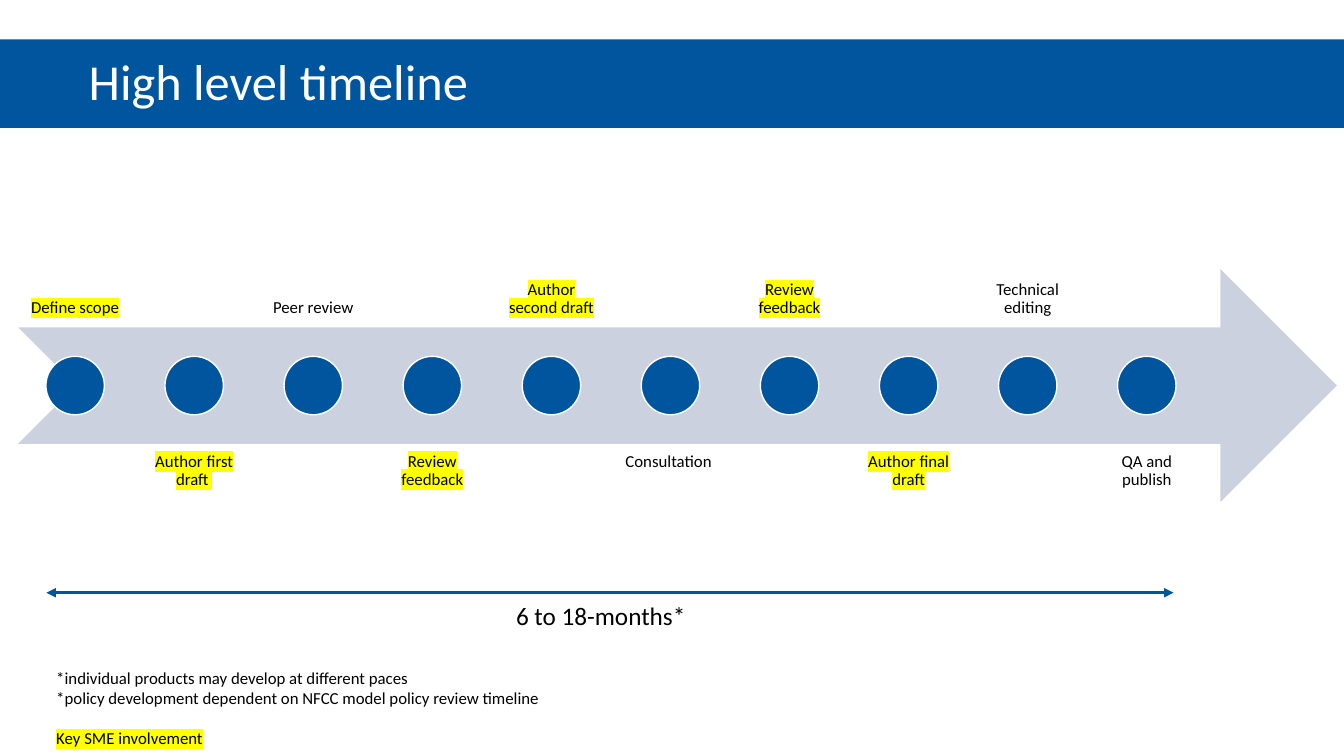
"""Build a slide with a ten-step policy timeline on a notched arrow."""
from lxml import etree
from pptx import Presentation
from pptx.dml.color import RGBColor
from pptx.enum.shapes import MSO_CONNECTOR, MSO_SHAPE
from pptx.enum.text import MSO_ANCHOR, PP_ALIGN
from pptx.oxml.ns import qn
from pptx.util import Inches, Pt

RECTANGLE, OVAL = MSO_SHAPE.RECTANGLE, MSO_SHAPE.OVAL
NOTCHED_ARROW = MSO_SHAPE.NOTCHED_RIGHT_ARROW
STRAIGHT = MSO_CONNECTOR.STRAIGHT
TOP, MIDDLE, BOTTOM = MSO_ANCHOR.TOP, MSO_ANCHOR.MIDDLE, MSO_ANCHOR.BOTTOM
LEFT, CENTER = PP_ALIGN.LEFT, PP_ALIGN.CENTER

TITLE = "High level timeline"
STEPS = [
    ("Define scope", True),
    ("Author first draft ", True),
    ("Peer review", False),
    ("Review feedback", True),
    ("Author second draft", True),
    ("Consultation ", False),
    ("Review feedback", True),
    ("Author final draft", True),
    ("Technical editing", False),
    ("QA and publish", False),
]
DURATION = [("6 to 18-months*", False)]
NOTES = [
    ("*individual products may develop at different paces", False),
    ("*policy development dependent on NFCC model policy review timeline", False),
    ("Key SME involvement", True),
]

THEME = {
    "font": "Calibri",
    "blue": RGBColor(0x00, 0x55, 0x9F),
    "pale": RGBColor(0xCC, 0xD1, 0xDF),
    "white": RGBColor(0xFF, 0xFF, 0xFF),
    "black": RGBColor(0x00, 0x00, 0x00),
    "highlight": "FFFF00",
    "title": Pt(36),
    "duration": Pt(18),
    "body": Pt(12),
}

SLIDE_W, SLIDE_H = 13.33, 7.5
ARROW = (0.18, 2.67, 13.08, 2.31)
LABEL_W, LABEL_H, LABEL_INSET = 1.12, 2.31, 0.09
LABEL_ABOVE_Y, LABEL_BELOW_Y = 0.93, 4.4
FIRST_CENTER, STEP_PITCH, DOT = 0.745, 1.181, 0.58
SPAN_START, SPAN_END, SPAN_Y = 0.46, 11.64, 5.88


def add_block(slide, kind, box, fill, line=None):
    block = slide.shapes.add_shape(kind, *map(Inches, box))
    block.shadow.inherit = False
    block.fill.solid()
    block.fill.fore_color.rgb = fill
    if line is None:
        block.line.fill.background()
    else:
        block.line.color.rgb = line
        block.line.width = Pt(1)
    return block


def write(frame, lines, size, color, align=LEFT, spacing=None):
    for index, (text, highlighted) in enumerate(lines):
        paragraph = frame.paragraphs[0] if index == 0 else frame.add_paragraph()
        paragraph.alignment = align
        paragraph.line_spacing = spacing
        paragraph.font.name = THEME["font"]
        paragraph.font.size = size
        paragraph.font.color.rgb = color
        run = paragraph.add_run()
        run.text = text
        if highlighted:
            mark = etree.SubElement(run.font._element, qn("a:highlight"))
            etree.SubElement(mark, qn("a:srgbClr"), val=THEME["highlight"])


def add_text(slide, box, lines, size, align=LEFT, spacing=None, wrap=False):
    frame = slide.shapes.add_textbox(*map(Inches, box)).text_frame
    frame.word_wrap = wrap
    write(frame, lines, size, THEME["black"], align, spacing)
    return frame


def add_title(slide):
    frame = add_block(slide, RECTANGLE, (0, 0.39, SLIDE_W, 0.88), THEME["blue"]).text_frame
    frame.word_wrap = True
    frame.vertical_anchor = MIDDLE
    frame.margin_left = Inches(0.88)
    write(frame, [(TITLE, False)], THEME["title"], THEME["white"], spacing=0.9)


def add_steps(slide):
    add_block(slide, NOTCHED_ARROW, ARROW, THEME["pale"])
    dot_y = ARROW[1] + (ARROW[3] - DOT) / 2
    for index, step in enumerate(STEPS):
        center = FIRST_CENTER + index * STEP_PITCH
        above = index % 2 == 0
        label_y = LABEL_ABOVE_Y if above else LABEL_BELOW_Y
        label_box = (center - LABEL_W / 2, label_y, LABEL_W, LABEL_H)
        label = add_text(slide, label_box, [step], THEME["body"], CENTER, 0.9, True)
        label.vertical_anchor = BOTTOM if above else TOP
        label.margin_left = label.margin_right = Inches(LABEL_INSET)
        label.margin_top = label.margin_bottom = Inches(LABEL_INSET)
        dot_box = (center - DOT / 2, dot_y, DOT, DOT)
        add_block(slide, OVAL, dot_box, THEME["blue"], THEME["white"])


def add_span(slide):
    ends = map(Inches, (SPAN_START, SPAN_Y, SPAN_END, SPAN_Y))
    span = slide.shapes.add_connector(STRAIGHT, *ends)
    span.line.color.rgb = THEME["blue"]
    span.line.width = Pt(2.25)
    outline = span.line._get_or_add_ln()
    for end in ("a:headEnd", "a:tailEnd"):
        etree.SubElement(outline, qn(end), type="triangle")
    etree.SubElement(span._element.spPr, qn("a:effectLst"))
    add_text(slide, (5.02, 5.91, 1.9, 0.4), DURATION, THEME["duration"])


def main():
    deck = Presentation()
    deck.slide_width, deck.slide_height = Inches(SLIDE_W), Inches(SLIDE_H)
    slide = deck.slides.add_slide(deck.slide_layouts[6])
    add_title(slide)
    add_steps(slide)
    add_span(slide)
    notes = add_text(slide, (0.46, 6.57, 5.04, 0.91), NOTES, THEME["body"])
    notes.paragraphs[-1].space_before = Pt(14.6)
    deck.save("out.pptx")


if __name__ == "__main__":
    main()
